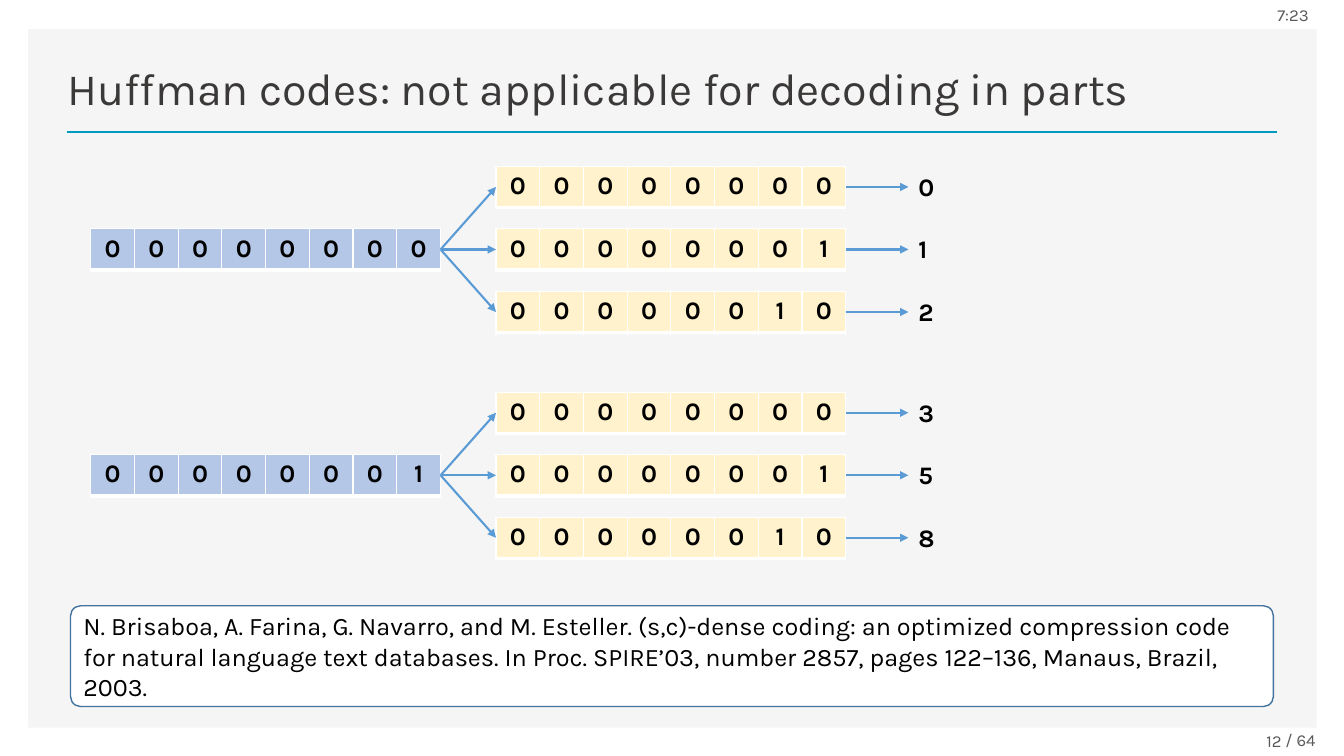
from lxml.etree import SubElement
from pptx import Presentation
from pptx.dml.color import RGBColor
from pptx.enum.shapes import MSO_CONNECTOR, MSO_SHAPE
from pptx.enum.text import MSO_ANCHOR, PP_ALIGN
from pptx.oxml.ns import qn
from pptx.util import Inches, Pt

TITLE = "Huffman codes: not applicable for decoding in parts"
CITATION = (
    "N. Brisaboa, A. Farina, G. Navarro, and M. Esteller. (s,c)-dense coding: "
    "an optimized compression code for natural language text databases. In Proc. "
    "SPIRE’03, number 2857, pages 122–136, Manaus, Brazil, 2003."
)
# First byte, top of its group, and the (second byte, decoded value) pairs
CODE_GROUPS = [
    ("00000000", 1.65, [("00000000", "0"), ("00000001", "1"), ("00000010", "2")]),
    ("00000001", 3.89, [("00000000", "3"), ("00000001", "5"), ("00000010", "8")]),
]
BORDERS = {"a:lnL": 1, "a:lnR": 1, "a:lnT": 1, "a:lnB": 3}

FIRST_LEFT, SECOND_LEFT, VALUE_LEFT = 0.9, 4.92, 9.01
BYTE_WIDTH, BYTE_HEIGHT, ROW_PITCH = 3.47, 0.41, 0.62

BOLD_DIGIT = {"size": Pt(18), "bold": True}
SMALL = {"size": Pt(12), "color": "595959"}


def rgb(value):
    return RGBColor.from_string(value)


def write(frame, text, formats, align=PP_ALIGN.LEFT):
    paragraph = frame.paragraphs[0]
    paragraph.alignment = align
    run = paragraph.add_run()
    run.text = text
    values = {"name": "Karla", "color": "000000", **formats}
    run.font.color.rgb = rgb(values.pop("color"))
    for name, value in values.items():
        setattr(run.font, name, value)


def add_text(slide, text, box, formats, align=PP_ALIGN.LEFT, anchor=MSO_ANCHOR.TOP, wrap=True):
    frame = slide.shapes.add_textbox(*map(Inches, box)).text_frame
    frame.word_wrap = wrap
    frame.vertical_anchor = anchor
    write(frame, text, formats, align)


def add_box(slide, kind, box, fill, line=None):
    shape = slide.shapes.add_shape(kind, *map(Inches, box))
    shape.shadow.inherit = False
    shape.fill.solid()
    shape.fill.fore_color.rgb = rgb(fill)
    if line:
        shape.line.color.rgb = rgb(line)
        shape.line.width = Pt(1)
    else:
        shape.line.fill.background()
    return shape


def add_line(slide, start, end, color, width, arrow=False):
    connector = slide.shapes.add_connector(
        MSO_CONNECTOR.STRAIGHT, *map(Inches, (*start, *end)))
    connector.line.color.rgb = rgb(color)
    connector.line.width = Pt(width)
    if arrow:
        SubElement(connector.line._get_or_add_ln(), qn("a:tailEnd"), type="triangle")
    SubElement(connector._element.spPr, qn("a:effectLst"))


def add_byte(slide, bits, left, top, fill):
    """Draw one byte as a one-row table with a bit in each cell."""
    table = slide.shapes.add_table(
        1, len(bits), *map(Inches, (left, top, BYTE_WIDTH, BYTE_HEIGHT))).table
    table.first_row = table.horz_banding = False
    for column, bit in enumerate(bits):
        table.columns[column].width = Inches(BYTE_WIDTH / len(bits))
        cell = table.cell(0, column)
        properties = cell._tc.get_or_add_tcPr()
        for tag, width in BORDERS.items():
            border = SubElement(properties, qn(tag), w=str(Pt(width)))
            SubElement(SubElement(border, qn("a:solidFill")), qn("a:srgbClr"), val="FFFFFF")
        cell.fill.solid()
        cell.fill.fore_color.rgb = rgb(fill)
        write(cell.text_frame, bit, BOLD_DIGIT, PP_ALIGN.CENTER)


def add_code_group(slide, first_byte, group_top, codes):
    first_top = group_top + ROW_PITCH
    add_byte(slide, first_byte, FIRST_LEFT, first_top, "B4C7E7")
    fork = (FIRST_LEFT + BYTE_WIDTH, first_top + BYTE_HEIGHT / 2)
    for row, (second_byte, value) in enumerate(codes):
        top = group_top + row * ROW_PITCH
        middle = top + BYTE_HEIGHT / 2
        add_byte(slide, second_byte, SECOND_LEFT, top, "FFF2CC")
        arrows = [
            (fork, (SECOND_LEFT, middle)),
            ((SECOND_LEFT + BYTE_WIDTH, middle), (VALUE_LEFT, middle)),
        ]
        for start, end in arrows:
            add_line(slide, start, end, "5B9BD5", 1.5, arrow=True)
        add_text(slide, value, (VALUE_LEFT, top, 0.35, 0.4), BOLD_DIGIT, wrap=False)


def main():
    presentation = Presentation()
    presentation.slide_width, presentation.slide_height = Inches(13.33), Inches(7.5)
    slide = presentation.slides.add_slide(presentation.slide_layouts[6])

    add_box(slide, MSO_SHAPE.RECTANGLE, (0.28, 0.29, 12.78, 6.93), "F5F5F5")
    add_line(slide, (0.66, 1.31), (12.67, 1.31), "009BC0", 2)
    add_text(slide, TITLE, (0.57, 0.49, 11.93, 0.7),
             {"size": Pt(32), "color": "3B3838"}, anchor=MSO_ANCHOR.BOTTOM)

    for group in CODE_GROUPS:
        add_code_group(slide, *group)

    citation = add_box(slide, MSO_SHAPE.ROUNDED_RECTANGLE,
                       (0.7, 6.01, 11.93, 1), "FFFFFF", "43739E")
    citation.adjustments[0] = 0.1
    citation.text_frame.word_wrap = True
    citation.text_frame.vertical_anchor = MSO_ANCHOR.MIDDLE
    write(citation.text_frame, CITATION, {"size": Pt(18)})

    add_text(slide, "7:23", (12.57, -0.05, 3.58, 0.4), SMALL, anchor=MSO_ANCHOR.MIDDLE)
    add_text(slide, "12", (9.23, 7.15, 3.58, 0.4), SMALL, PP_ALIGN.RIGHT, MSO_ANCHOR.MIDDLE)
    add_text(slide, "/ 64", (12.65, 7.19, 0.8, 0.3), SMALL)
    presentation.save("out.pptx")


if __name__ == "__main__":
    main()
